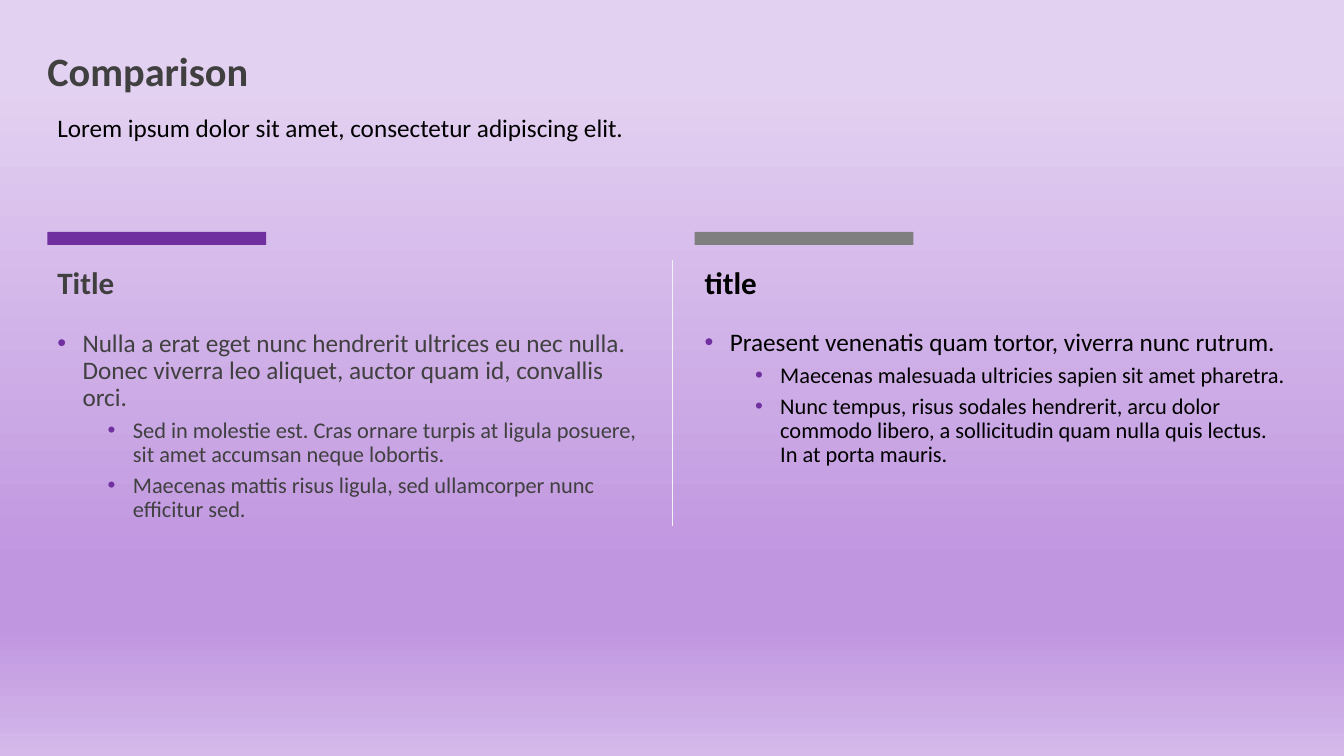
from dataclasses import dataclass

from lxml import etree
from pptx import Presentation
from pptx.dml.color import RGBColor
from pptx.enum.shapes import MSO_CONNECTOR, MSO_SHAPE
from pptx.enum.text import MSO_ANCHOR, MSO_AUTO_SIZE, PP_ALIGN
from pptx.oxml.ns import qn
from pptx.util import Inches, Pt

LEFT = PP_ALIGN.LEFT
TOP, BOTTOM = MSO_ANCHOR.TOP, MSO_ANCHOR.BOTTOM
NO_FIT = MSO_AUTO_SIZE.NONE
RECTANGLE = MSO_SHAPE.RECTANGLE
STRAIGHT = MSO_CONNECTOR.STRAIGHT


@dataclass(frozen=True)
class Theme:
    font: str = "Calibri"
    dark: str = "404040"
    black: str = "000000"
    accent: str = "7030A0"
    gray: str = "7F7F7F"
    divider: str = "F2F2F2"
    backdrop: tuple = ((11, "E3D1F1"), (75, "C096E0"), (83, "C096E0"), (100, "D5B9EA"))
    title_size: float = 28.8
    heading_size: float = 22.2
    level_sizes: tuple = (18, 16)
    level_gaps: tuple = (10, 5)


THEME = Theme()

TITLE = "Comparison"
SUBTITLE = "Lorem ipsum dolor sit amet, consectetur adipiscing elit."
COLUMNS = [
    {
        "heading": "Title", "bar": THEME.accent, "ink": THEME.dark, "body_top": 3.23,
        "points": [
            (0, "Nulla a erat eget nunc hendrerit ultrices eu nec nulla. "
                "Donec viverra leo aliquet, auctor quam id, convallis orci."),
            (1, "Sed in molestie est. Cras ornare turpis at ligula posuere, "
                "sit amet accumsan neque lobortis."),
            (1, "Maecenas mattis risus ligula, sed ullamcorper nunc efficitur sed."),
        ],
    },
    {
        "heading": "title", "bar": THEME.gray, "ink": THEME.black, "body_top": 3.22,
        "points": [
            (0, "Praesent venenatis quam tortor, viverra nunc rutrum."),
            (1, "Maecenas malesuada ultricies sapien sit amet pharetra."),
            (1, "Nunc tempus, risus sodales hendrerit, arcu dolor commodo libero, "
                "a sollicitudin quam nulla quis lectus. In at porta mauris."),
        ],
    },
]

WIDTH, HEIGHT = 13.33, 7.5
MARGIN, GUTTER = 0.47, 0.44
CONTENT_WIDTH = 12.4
COLUMN_WIDTH = (CONTENT_WIDTH - GUTTER) / 2
BAR_TOP, BAR_WIDTH, BAR_HEIGHT = 2.3, 2.17, 0.13
ROW_HEIGHT, HEADING_TOP, BODY_HEIGHT = 0.39, 2.67, 2.4
DIVIDER_TOP, DIVIDER_BOTTOM = 2.58, 5.22
INDENT, LEVEL_STEP = 0.25, 0.5


def color(code):
    return RGBColor.from_string(code)


def paint_backdrop(page):
    fill = page.background.fill
    fill.gradient()
    fill.gradient_angle = 270
    stops = next(page.element.iter(qn("a:gsLst")))
    for stop in list(stops):
        stops.remove(stop)
    for percent, code in THEME.backdrop:
        stop = etree.SubElement(stops, qn("a:gs"), pos=str(percent * 1000))
        etree.SubElement(stop, qn("a:srgbClr"), val=code)


def write(para, text, size, ink, bold=False, line=0.9, gap=0):
    para.alignment = LEFT
    para.line_spacing = line
    para.space_before = Pt(gap)
    span = para.add_run()
    span.text = text
    span.font.name = THEME.font
    span.font.size = Pt(size)
    span.font.bold = bold
    span.font.color.rgb = color(ink)


def add_bullet(para, level):
    para.level = level
    props = para._p.get_or_add_pPr()
    props.set("marL", str(Inches(INDENT + level * LEVEL_STEP)))
    props.set("indent", str(-Inches(INDENT)))
    tint = etree.SubElement(props, qn("a:buClr"))
    etree.SubElement(tint, qn("a:srgbClr"), val=THEME.accent)
    etree.SubElement(props, qn("a:buFont"), typeface="Arial")
    etree.SubElement(props, qn("a:buChar"), char="•")


def add_text_box(page, left, top, width, height):
    box = page.shapes.add_textbox(Inches(left), Inches(top), Inches(width), Inches(height))
    frame = box.text_frame
    frame.word_wrap = True
    frame.auto_size = NO_FIT
    frame.vertical_anchor = TOP
    return frame


def add_title(page):
    box = page.shapes.title
    box.left, box.top = Inches(MARGIN), Inches(MARGIN)
    box.width, box.height = Inches(CONTENT_WIDTH), Inches(0.47)
    frame = box.text_frame
    frame.margin_left = frame.margin_right = frame.margin_top = frame.margin_bottom = 0
    frame.vertical_anchor = BOTTOM
    frame.word_wrap = True
    frame.auto_size = NO_FIT
    write(frame.paragraphs[0], TITLE, THEME.title_size, THEME.dark, bold=True)


def add_divider(page):
    line = page.shapes.add_connector(STRAIGHT, Inches(WIDTH / 2), Inches(DIVIDER_TOP),
                                     Inches(WIDTH / 2), Inches(DIVIDER_BOTTOM))
    line.line.color.rgb = color(THEME.divider)
    line.line.width = Pt(0.5)
    etree.SubElement(line._element.spPr, qn("a:effectLst"))


def add_column(page, index, column):
    left = MARGIN + index * (COLUMN_WIDTH + GUTTER)
    bar = page.shapes.add_shape(RECTANGLE, Inches(left), Inches(BAR_TOP),
                                Inches(BAR_WIDTH), Inches(BAR_HEIGHT))
    bar.shadow.inherit = False
    bar.fill.solid()
    bar.fill.fore_color.rgb = color(column["bar"])
    bar.line.fill.background()

    heading = add_text_box(page, left, HEADING_TOP, COLUMN_WIDTH, ROW_HEIGHT)
    write(heading.paragraphs[0], column["heading"], THEME.heading_size, column["ink"],
          bold=True, line=0.7, gap=10)

    body = add_text_box(page, left, column["body_top"], COLUMN_WIDTH, BODY_HEIGHT)
    for number, (level, text) in enumerate(column["points"]):
        para = body.add_paragraph() if number else body.paragraphs[0]
        write(para, text, THEME.level_sizes[level], column["ink"],
              gap=THEME.level_gaps[level])
        add_bullet(para, level)


def main():
    deck = Presentation()
    deck.slide_width, deck.slide_height = Inches(WIDTH), Inches(HEIGHT)
    page = deck.slides.add_slide(deck.slide_layouts[5])
    paint_backdrop(page)
    add_title(page)
    subtitle = add_text_box(page, MARGIN, 1.1, CONTENT_WIDTH, ROW_HEIGHT)
    write(subtitle.paragraphs[0], SUBTITLE, THEME.level_sizes[0], THEME.black, gap=10)
    for index, column in enumerate(COLUMNS):
        add_column(page, index, column)
    add_divider(page)
    deck.save("out.pptx")


if __name__ == "__main__":
    main()
